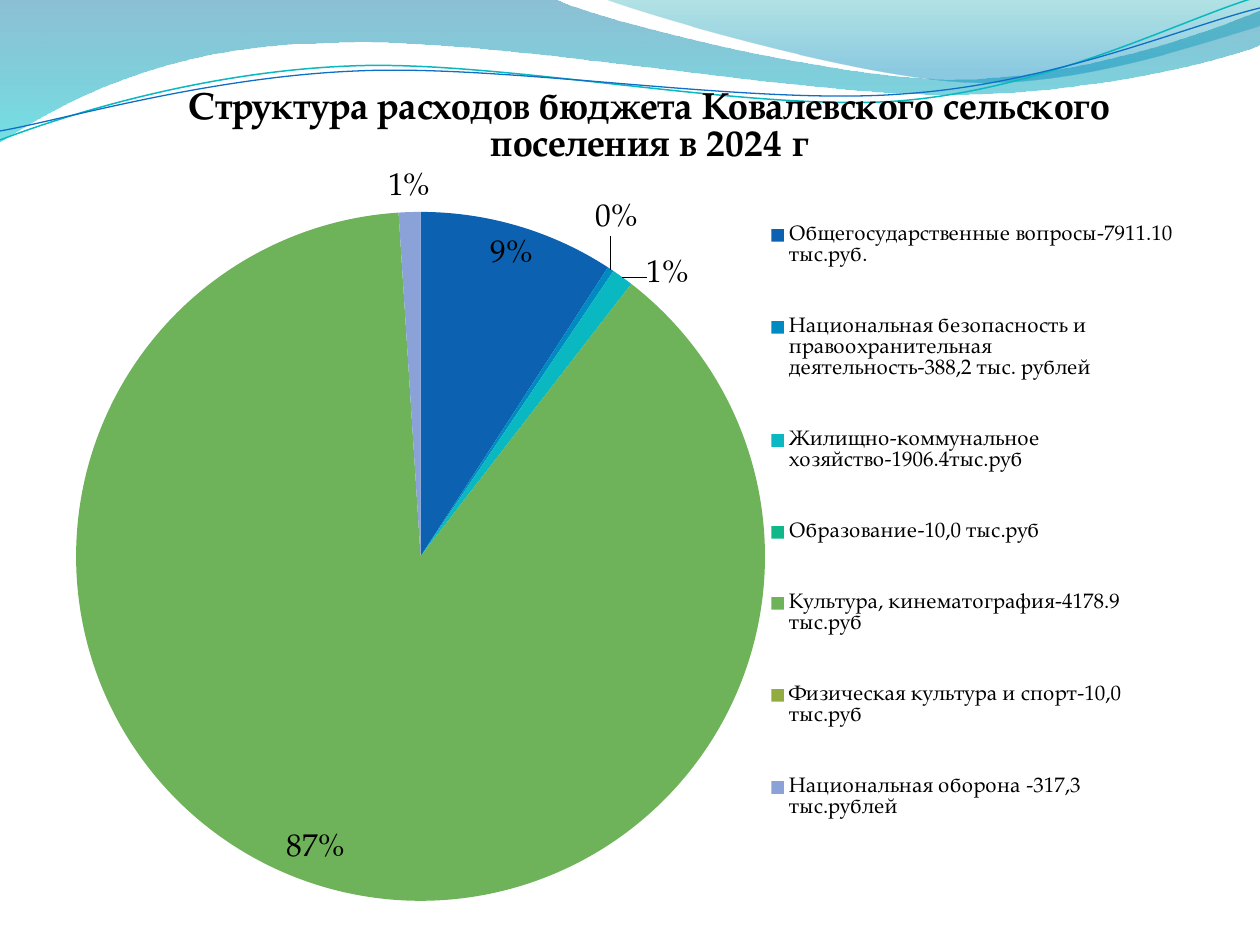
from pptx import Presentation
from pptx.chart.data import CategoryChartData
from pptx.dml.color import RGBColor
from pptx.enum.chart import XL_CHART_TYPE, XL_LABEL_POSITION, XL_LEGEND_POSITION
from pptx.oxml import parse_xml
from pptx.oxml.ns import nsdecls, qn
from pptx.util import Pt

PIE = XL_CHART_TYPE.PIE
RIGHT = XL_LEGEND_POSITION.RIGHT
INSIDE = XL_LABEL_POSITION.INSIDE_END
OUTSIDE = XL_LABEL_POSITION.OUTSIDE_END
FONT = "TeX Gyre Pagella"
PX = 914400 / 126
CHART_LEFT, CHART_TOP, CHART_WIDTH, CHART_HEIGHT = 35, 45, 1197, 873


def colour(value):
    return RGBColor.from_string(value)


def set_layout(parent, index, x, y, width=None, height=None, inner=False, offset=False):
    """Give a chart part a manual place, in px of the chart frame."""
    for old in parent.findall(qn("c:layout")):
        parent.remove(old)
    parts = '<c:layoutTarget val="inner"/>' if inner else ""
    if not offset:
        parts += '<c:xMode val="edge"/><c:yMode val="edge"/>'
    for tag, length, whole in (("x", x, CHART_WIDTH), ("y", y, CHART_HEIGHT),
                               ("w", width, CHART_WIDTH), ("h", height, CHART_HEIGHT)):
        if length is not None:
            parts += f'<c:{tag} val="{length / whole:.4f}"/>'
    parent.insert(index, parse_xml(
        f'<c:layout {nsdecls("c")}><c:manualLayout>{parts}</c:manualLayout></c:layout>'))


deck = Presentation()
deck.slide_width, deck.slide_height = round(1260 * PX), round(945 * PX)
page = deck.slides.add_slide(deck.slide_layouts[6])

# Each outline: a start point, then lines (x, y) and Bezier curves (x1, y1, x2, y2, x, y).
# Each gradient stop: position, colour, opacity in percent.
waves = [
    ([(0, 0), (554, -1), (600, 21, 837, 79, 955, 79), (1075, 79, 1207, 33, 1260, 11),
      (1261, 45), (1239, 55, 1096, 96, 940, 94), (784, 94, 481, 35, 324, 43),
      (163, 45, 58, 105, -1, 142)],
     [(0, "0074A1", 45), (1, "00C6CF", 55)], None),
    ([(604, -1), (641, 14, 859, 78, 969, 82), (1079, 87, 1211, 40, 1260, 26), (1260, 0)],
     [(0, "00A1A9", 30), (0.8, "008BBF", 45)], None),
    ([(0, 140), (60, 117, 199, 72, 349, 66), (498, 59, 747, 112, 898, 101),
      (1050, 89, 1182, 19, 1257, -3)], None, ("0AB8BF", 0.85)),
    ([(0, 131), (59, 121, 207, 77, 357, 71), (508, 64, 752, 106, 903, 94),
      (1053, 84, 1186, 26, 1260, 8)], None, ("0F6FC6", 0.75)),
]
for outline, stops, line in waves:
    points = [part[i:i + 2] for part in outline for i in range(0, len(part), 2)]
    builder = page.shapes.build_freeform(*points[0], scale=PX)
    builder.add_line_segments(points[1:], close=stops is not None)
    wave = builder.convert_to_shape()
    # Merge the three points of each curve into one Bezier segment
    segments = iter(list(wave._element.iter(qn("a:lnTo"))))
    for part in outline[1:]:
        group = [next(segments) for _ in range(len(part) // 2)]
        if len(group) == 3:
            curve = parse_xml(f'<a:cubicBezTo {nsdecls("a")}/>')
            group[0].addprevious(curve)
            for segment in group:
                curve.append(segment[0])
                segment.getparent().remove(segment)
    wave.shadow.inherit = False
    if stops:
        wave.line.fill.background()
        wave.fill.gradient()
        wave.fill.gradient_angle = 270
        for stop, (position, value, opacity) in zip(wave.fill.gradient_stops, stops):
            stop.position = position
            stop.color.rgb = colour(value)
        for rgb, (position, value, opacity) in zip(wave._element.spPr.iter(qn("a:srgbClr")), stops):
            rgb.append(parse_xml(f'<a:alpha {nsdecls("a")} val="{opacity * 1000}"/>'))
    else:
        wave.fill.background()
        wave.line.color.rgb = colour(line[0])
        wave.line.width = Pt(line[1])

# Category, share, slice colour, label position, label shift in px
expenses = [
    ("Общегосударственные вопросы-7911.10 тыс.руб.", 0.09, "0C62B0", INSIDE, (17, 7)),
    ("Национальная безопасность и правоохранительная деятельность-388,2 тыс. рублей",
     0.003, "008AC2", OUTSIDE, (-19, -27)),
    ("Жилищно-коммунальное хозяйство-1906.4тыс.руб", 0.01, "09B8C0", OUTSIDE, (20, 20)),
    ("Образование-10,0 тыс.руб", 0, "10B789", None, None),
    ("Культура, кинематография-4178.9 тыс.руб", 0.87, "6EB35A", INSIDE, (-35, -13)),
    ("Физическая культура и спорт-10,0 тыс.руб", 0, "92AC41", None, None),
    ("Национальная оборона -317,3 тыс.рублей", 0.01, "8AA2D8", OUTSIDE, None),
]
data = CategoryChartData(number_format="0%")
data.categories = [row[0] for row in expenses]
data.add_series("Series 1", [row[1] for row in expenses])
frame = page.shapes.add_chart(PIE, *(round(length * PX) for length in (
    CHART_LEFT, CHART_TOP, CHART_WIDTH, CHART_HEIGHT)), data)
chart = frame.chart
chart.font.name = FONT
chart.font.size = Pt(18)
chart.font.color.rgb = colour("000000")

chart.has_title = True
para = chart.chart_title.text_frame.paragraphs[0]
span = para.add_run()
span.text = "Структура расходов бюджета Ковалевского сельского поселения в 2024 г"
span.font.name = FONT
span.font.size = Pt(21.4)
span.font.bold = True
span.font.color.rgb = colour("000000")
set_layout(chart.chart_title._element, 1, 147, 36)

chart.has_legend = True
legend = chart.legend
legend.position = RIGHT
legend.include_in_layout = False
legend.font.name = FONT
legend.font.size = Pt(12)
legend.font.color.rgb = colour("000000")
set_layout(legend._element, 1, 733, 130, 408, 694)

plot = chart.plots[0]
plot.vary_by_categories = True
set_layout(plot._element.getparent(), 0, 41, 167, 689, 689, inner=True)
series = plot.series[0]
labels = series.data_labels
labels.show_value = False
labels.number_format = "0%"
labels.number_format_is_linked = False
for index, (category, share, value, position, shift) in enumerate(expenses):
    point = series.points[index]
    point.format.fill.solid()
    point.format.fill.fore_color.rgb = colour(value)
    point.format.line.fill.background()
    if position is None:
        continue
    label = point.data_label
    label.font.name = FONT
    label.font.size = Pt(18)
    label.font.color.rgb = colour("000000")
    label.position = position
    if shift:
        set_layout(labels._element.findall(qn("c:dLbl"))[-1], 1, *shift, offset=True)

deck.save("out.pptx")
